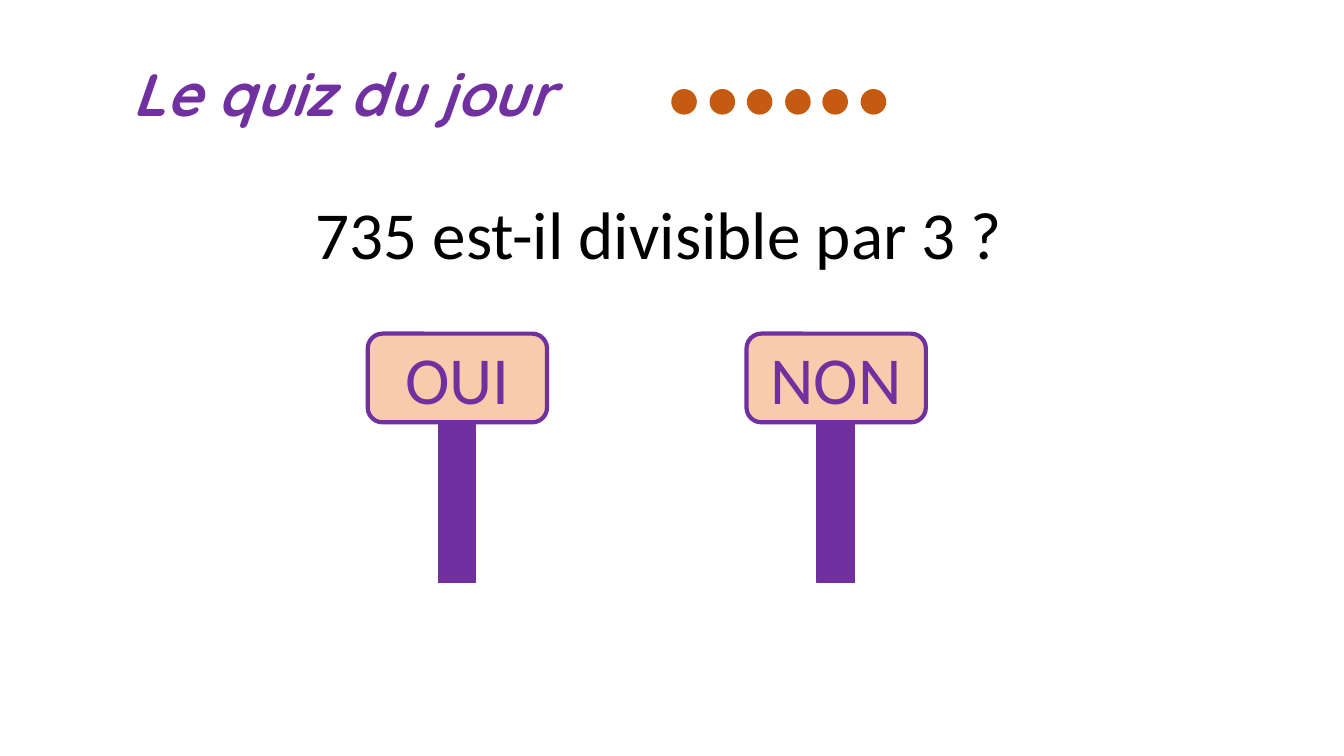
from pptx import Presentation
from pptx.dml.color import RGBColor
from pptx.enum.shapes import MSO_SHAPE
from pptx.enum.text import MSO_ANCHOR, PP_ALIGN
from pptx.util import Pt

ROUNDED, RECTANGLE, OVAL = MSO_SHAPE.ROUNDED_RECTANGLE, MSO_SHAPE.RECTANGLE, MSO_SHAPE.OVAL
TOP, MIDDLE = MSO_ANCHOR.TOP, MSO_ANCHOR.MIDDLE
LEFT, CENTER = PP_ALIGN.LEFT, PP_ALIGN.CENTER

PURPLE = RGBColor(0x70, 0x30, 0xA0)
ORANGE = RGBColor(0xC5, 0x5A, 0x11)
PEACH = RGBColor(0xF8, 0xCB, 0xAD)
BLACK = RGBColor(0, 0, 0)

# Content; lengths in px, 100 px to the inch
EMU_PER_PX = 9144
SLIDE_SIZE = (1334, 750)
TITLE = "Le quiz du jour"
TITLE_BOX = (122, 59, 560, 81)
TITLE_FONT = {"name": "Quicksand", "size": Pt(42.7), "bold": True, "italic": True}
QUESTION = "735 est-il divisible par 3 ?"
QUESTION_BOX = (188, 192, 933, 88)
BODY_FONT = {"name": "Calibri", "size": Pt(48)}
SIGNS = [("OUI", 365), ("NON", 741)]
SIGN_TOP, SIGN_WIDTH, SIGN_HEIGHT = 331, 178, 88
POST_WIDTH, POST_HEIGHT = 37, 159
DOT_COUNT, DOT_SIZE, DOT_TOP = 6, 24, 89
FIRST_DOT, LAST_DOT = 667, 855


def emu(lengths):
    return [length * EMU_PER_PX for length in lengths]


def write(shape, text, font_values, color, anchor=MIDDLE, align=CENTER, line_spacing=None):
    frame = shape.text_frame
    frame.word_wrap = True
    frame.vertical_anchor = anchor
    paragraph = frame.paragraphs[0]
    paragraph.alignment = align
    paragraph.line_spacing = line_spacing
    run = paragraph.add_run()
    run.text = text
    for name, value in font_values.items():
        setattr(run.font, name, value)
    run.font.color.rgb = color


def add_shape(shapes, kind, box, fill, line, line_width=1):
    shape = shapes.add_shape(kind, *emu(box))
    shape.shadow.inherit = False
    shape.fill.solid()
    shape.fill.fore_color.rgb = fill
    shape.line.color.rgb = line
    shape.line.width = Pt(line_width)
    return shape


def add_sign(shapes, answer, left):
    group = shapes.add_group_shape()
    board = add_shape(group.shapes, ROUNDED, (left, SIGN_TOP, SIGN_WIDTH, SIGN_HEIGHT),
                      PEACH, PURPLE, 3)
    write(board, answer, BODY_FONT, PURPLE)
    post_left = left + (SIGN_WIDTH - POST_WIDTH) // 2
    add_shape(group.shapes, RECTANGLE,
              (post_left, SIGN_TOP + SIGN_HEIGHT, POST_WIDTH, POST_HEIGHT), PURPLE, PURPLE)


def main():
    presentation = Presentation()
    presentation.slide_width, presentation.slide_height = emu(SLIDE_SIZE)
    slide = presentation.slides.add_slide(presentation.slide_layouts.get_by_name("Title Only"))

    title = slide.shapes.title
    title.left, title.top, title.width, title.height = emu(TITLE_BOX)
    write(title, TITLE, TITLE_FONT, PURPLE, TOP, LEFT, 0.9)

    for index in range(DOT_COUNT):
        left = FIRST_DOT + round((LAST_DOT - FIRST_DOT) * index / (DOT_COUNT - 1))
        add_shape(slide.shapes, OVAL, (left, DOT_TOP, DOT_SIZE, DOT_SIZE), ORANGE, ORANGE)

    question = slide.shapes.add_textbox(*emu(QUESTION_BOX))
    write(question, QUESTION, BODY_FONT, BLACK, line_spacing=0.9)

    for answer, left in SIGNS:
        add_sign(slide.shapes, answer, left)

    presentation.save("out.pptx")


if __name__ == "__main__":
    main()
